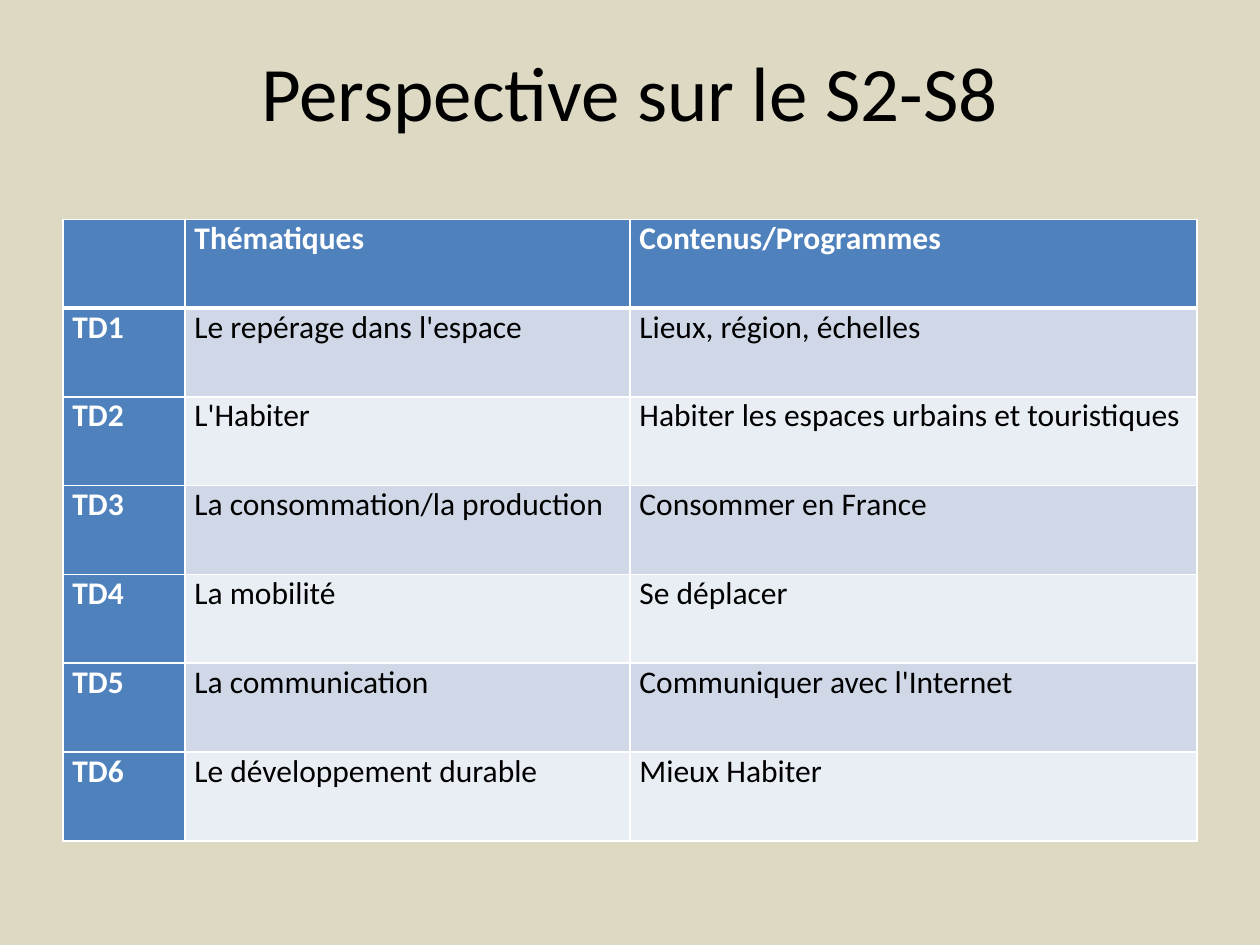
import pptx
import pptx.dml.color
import pptx.enum.text
import pptx.oxml
import pptx.oxml.ns
import pptx.util
from pptx.util import Cm

COLORS = {
    "background": "DDD9C3",
    "header": "4F81BD",
    "odd_row": "D0D8E8",
    "even_row": "E9EDF4",
    "dark_text": "000000",
    "light_text": "FFFFFF",
    "border": "FFFFFF",
}
FONT = "Calibri"
TITLE = "Perspective sur le S2-S8"
ROWS = [
    ("", "Thématiques", "Contenus/Programmes"),
    ("TD1", "Le repérage dans l'espace", "Lieux, région, échelles"),
    ("TD2", "L'Habiter", "Habiter les espaces urbains et touristiques"),
    ("TD3", "La consommation/la production", "Consommer en France"),
    ("TD4", "La mobilité", "Se déplacer"),
    ("TD5", "La communication", "Communiquer avec l'Internet"),
    ("TD6", "Le développement durable", "Mieux Habiter"),
]
COLUMN_WIDTHS = [Cm(2.46), Cm(8.97), Cm(11.43)]
ROW_HEIGHT = Cm(1.79)
LEFT = Cm(1.27)
WIDTH = sum(COLUMN_WIDTHS)

ALIGN = pptx.enum.text.PP_ALIGN
ANCHOR = pptx.enum.text.MSO_ANCHOR


def rgb(name):
    return pptx.dml.color.RGBColor.from_string(COLORS[name])


def write_text(frame, text, size=18, color="dark_text", bold=False, align=ALIGN.JUSTIFY):
    para = frame.paragraphs[0]
    para.alignment = align
    para.font.size = pptx.util.Pt(size)
    if not text:
        return
    span = para.add_run()
    span.text = text
    span.font.name = FONT
    span.font.size = pptx.util.Pt(size)
    span.font.bold = bold
    span.font.color.rgb = rgb(color)


def add_title(page):
    box = page.shapes.add_textbox(LEFT, Cm(0.41), WIDTH, Cm(2.84))
    box.text_frame.word_wrap = True
    box.text_frame.vertical_anchor = ANCHOR.MIDDLE
    write_text(box.text_frame, TITLE, size=44, align=ALIGN.CENTER)


def set_borders(cell, top=1, bottom=1):
    properties = cell._tc.get_or_add_tcPr()
    for side, points in (("L", 1), ("R", 1), ("T", top), ("B", bottom)):
        properties.append(pptx.oxml.parse_xml(
            f'<a:ln{side} {pptx.oxml.ns.nsdecls("a")} w="{pptx.util.Pt(points)}">'
            f'<a:solidFill><a:srgbClr val="{COLORS["border"]}"/></a:solidFill>'
            f'</a:ln{side}>'))


def format_cell(cell, text, row, column):
    is_heading = row == 0 or column == 0
    cell.margin_left = cell.margin_right = Cm(0.19)
    cell.margin_top = cell.margin_bottom = 0
    cell.vertical_anchor = ANCHOR.TOP
    # A thicker rule separates the header from the body
    set_borders(cell, top=3 if row == 1 else 1, bottom=3 if row == 0 else 1)
    band = "odd_row" if row % 2 else "even_row"
    cell.fill.solid()
    cell.fill.fore_color.rgb = rgb("header" if is_heading else band)
    write_text(cell.text_frame, text, bold=is_heading,
               color="light_text" if is_heading else "dark_text")


def add_programme_table(page):
    table = page.shapes.add_table(len(ROWS), len(COLUMN_WIDTHS), LEFT, Cm(4.42),
                                  WIDTH, ROW_HEIGHT * len(ROWS)).table
    table.first_col = True
    for column, width in zip(table.columns, COLUMN_WIDTHS):
        column.width = width
    for row, texts in enumerate(ROWS):
        table.rows[row].height = ROW_HEIGHT
        for column, text in enumerate(texts):
            format_cell(table.cell(row, column), text, row, column)


def main():
    deck = pptx.Presentation()
    deck.slide_width, deck.slide_height = Cm(25.4), Cm(19.05)
    page = deck.slides.add_slide(deck.slide_layouts[6])

    # Background
    page.background.fill.solid()
    page.background.fill.fore_color.rgb = rgb("background")

    # Title and table
    add_title(page)
    add_programme_table(page)
    deck.save("out.pptx")


if __name__ == "__main__":
    main()
